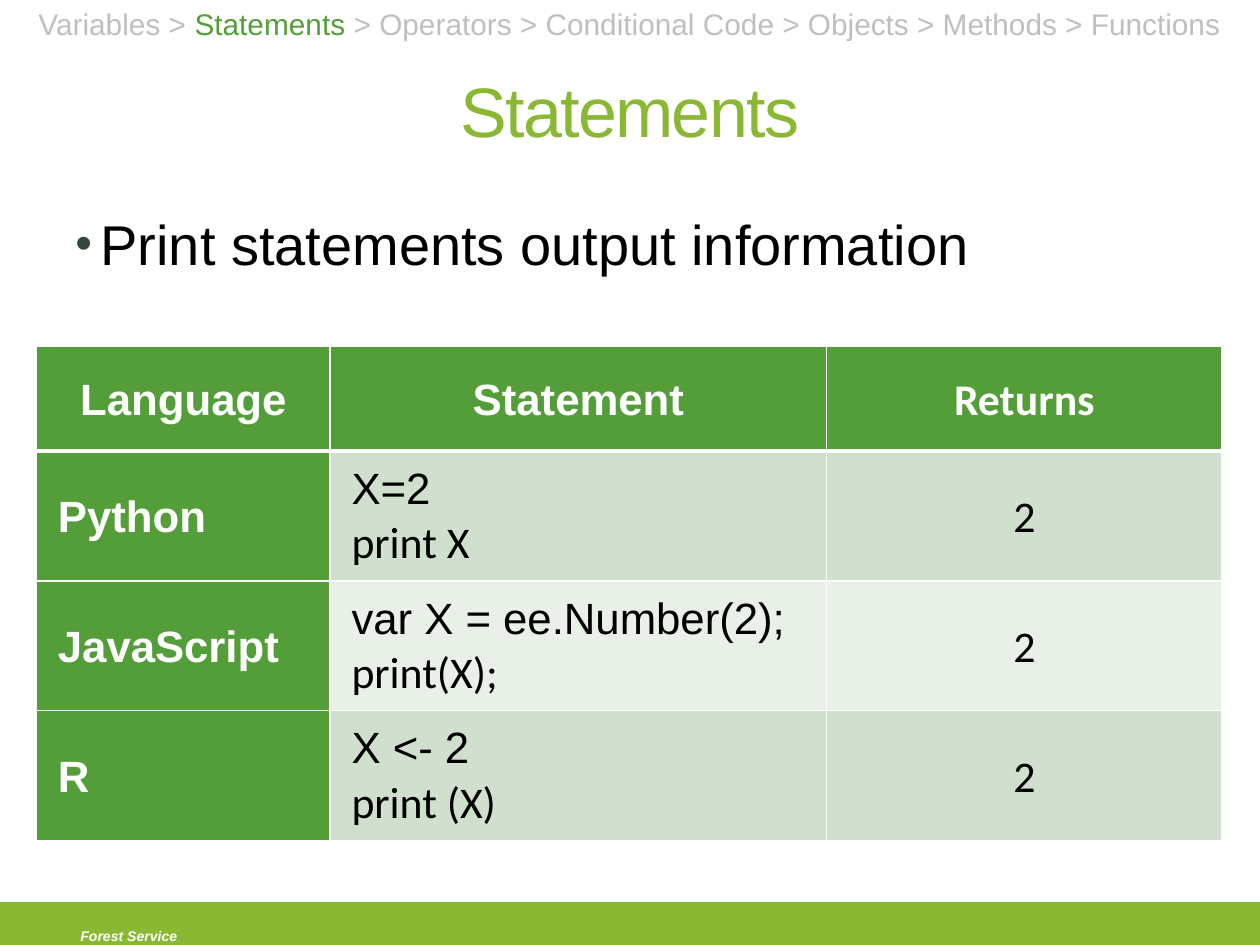
from lxml import etree
from pptx import Presentation
from pptx.dml.color import RGBColor
from pptx.enum.shapes import MSO_SHAPE
from pptx.enum.text import MSO_ANCHOR, PP_ALIGN
from pptx.oxml.ns import qn
from pptx.util import Inches, Pt

RECTANGLE = MSO_SHAPE.RECTANGLE
TOP, MIDDLE = MSO_ANCHOR.TOP, MSO_ANCHOR.MIDDLE
LEFT, CENTER = PP_ALIGN.LEFT, PP_ALIGN.CENTER

WHITE = RGBColor(0xFF, 0xFF, 0xFF)
BLACK = RGBColor(0x00, 0x00, 0x00)
GRAY = RGBColor(0xBF, 0xBF, 0xBF)
LIME = RGBColor(0x8A, 0xB8, 0x33)
GREEN = RGBColor(0x54, 0x9E, 0x39)
BULLET_COLOR = RGBColor(0x34, 0x47, 0x3D)
BANDS = [RGBColor(0xD1, 0xDF, 0xCE), RGBColor(0xE9, 0xF0, 0xE8)]

TOPICS = ["Variables", "Statements", "Operators", "Conditional Code",
          "Objects", "Methods", "Functions"]
CURRENT_TOPIC = "Statements"
COLUMN_WIDTHS = [2.33, 3.94, 3.14]
ROW_HEIGHTS = [0.83, 1.03, 1.03, 1.03]
HEADERS = ["Language", "Statement", "Returns"]
EXAMPLES = [
    ("Python", ["X=2", "print X"], "2"),
    ("JavaScript", ["var X = ee.Number(2);", "print(X);"], "2"),
    ("R", ["X <- 2", "print (X)"], "2"),
]


def set_font(font, size, color, name="Arial", bold=False):
    """Apply size, colour, typeface and weight to a font."""
    font.size = Pt(size)
    font.color.rgb = color
    font.name = name
    font.bold = bold


def add_text(slide, left, top, width, height, text, size, color,
             align=LEFT, anchor=TOP):
    """Add a one-paragraph text box and return its paragraph."""
    box = slide.shapes.add_textbox(Inches(left), Inches(top), Inches(width), Inches(height))
    frame = box.text_frame
    frame.word_wrap = True
    frame.vertical_anchor = anchor
    paragraph = frame.paragraphs[0]
    paragraph.text = text
    paragraph.alignment = align
    set_font(paragraph.font, size, color)
    return paragraph


def add_footer(slide):
    """Add the coloured footer bar and its label."""
    bar = slide.shapes.add_shape(RECTANGLE, 0, Inches(7.17), Inches(10), Inches(0.33))
    bar.shadow.inherit = False
    bar.fill.solid()
    bar.fill.fore_color.rgb = LIME
    bar.line.color.rgb = LIME
    bar.line.width = Pt(2)
    label = add_text(slide, 0.54, 7.31, 2.04, 0.24, "Forest Service", 8, WHITE)
    label.font.bold = True
    label.font.italic = True


def add_title(slide, text):
    """Add the centred title with slightly tightened letters."""
    paragraph = add_text(slide, 0.5, 0.33, 9, 1.08, text, 40, LIME, CENTER, MIDDLE)
    paragraph.runs[0].font._element.set("spc", "-100")


def add_bullet(slide, text):
    """Add the bulleted statement with a hanging indent."""
    paragraph = add_text(slide, 0.5, 1.61, 9, 0.65, "", 32, BLACK)
    properties = paragraph._p.get_or_add_pPr()
    indent = Inches(0.2)
    properties.set("marL", str(indent))
    properties.set("indent", str(-indent))
    color = etree.Element(qn("a:buClr"))
    etree.SubElement(color, qn("a:srgbClr"), val=str(BULLET_COLOR))
    size = etree.Element(qn("a:buSzPct"), val="85000")
    font = etree.Element(qn("a:buFont"), typeface="Arial")
    character = etree.Element(qn("a:buChar"), char="•")
    for position, element in enumerate([color, size, font, character]):
        properties.insert(position, element)
    paragraph.add_run().text = text


def add_borders(cell, top, bottom):
    """Give a cell white borders, with top and bottom widths in points."""
    properties = cell._tc.get_or_add_tcPr()
    for side, width in (("L", 1), ("R", 1), ("T", top), ("B", bottom)):
        line = etree.SubElement(properties, qn(f"a:ln{side}"), w=str(Pt(width)))
        fill = etree.SubElement(line, qn("a:solidFill"))
        etree.SubElement(fill, qn("a:srgbClr"), val=str(WHITE))


def fill_cell(cell, lines, fonts, color, fill, align=LEFT, bold=False, top=1, bottom=1):
    """Write lines into a cell, one typeface per line, and style it."""
    add_borders(cell, top, bottom)
    cell.fill.solid()
    cell.fill.fore_color.rgb = fill
    cell.vertical_anchor = MIDDLE
    cell.margin_left = cell.margin_right = Inches(0.17)
    cell.margin_top = cell.margin_bottom = 0
    cell.text = "\n".join(lines)
    for paragraph, name in zip(cell.text_frame.paragraphs, fonts):
        paragraph.alignment = align
        paragraph.line_spacing = 1.07
        set_font(paragraph.font, 25, color, name, bold)


def add_example_table(slide):
    """Add the table of print statements by language."""
    table = slide.shapes.add_table(
        len(ROW_HEIGHTS), len(COLUMN_WIDTHS), Inches(0.29), Inches(2.75),
        Inches(sum(COLUMN_WIDTHS)), Inches(sum(ROW_HEIGHTS))).table
    for column, width in zip(table.columns, COLUMN_WIDTHS):
        column.width = Inches(width)
    for row, height in zip(table.rows, ROW_HEIGHTS):
        row.height = Inches(height)
    for index, (header, name) in enumerate(zip(HEADERS, ["Arial", "Arial", "Calibri"])):
        fill_cell(table.cell(0, index), [header], [name], WHITE, GREEN, CENTER, True, bottom=3)
    for index, (language, code, result) in enumerate(EXAMPLES, start=1):
        band = BANDS[(index - 1) % 2]
        top = 3 if index == 1 else 1
        fill_cell(table.cell(index, 0), [language], ["Arial"], WHITE, GREEN, bold=True, top=top)
        fill_cell(table.cell(index, 1), code, ["Arial", "Calibri"], BLACK, band, top=top)
        fill_cell(table.cell(index, 2), [result], ["Calibri"], BLACK, band, CENTER, top=top)


def add_breadcrumb(slide):
    """Add the topic trail with the current topic highlighted."""
    paragraph = add_text(slide, 0, 0, 10, 0.39, "", 17, GRAY, CENTER)
    before, after = " > ".join(TOPICS).split(CURRENT_TOPIC)
    for text, color in ((before, GRAY), (CURRENT_TOPIC, GREEN), (after, GRAY)):
        run = paragraph.add_run()
        run.text = text
        run.font.color.rgb = color


def main():
    """Build the slide and save the presentation."""
    presentation = Presentation()
    presentation.slide_width = Inches(10)
    presentation.slide_height = Inches(7.5)
    slide = presentation.slides.add_slide(presentation.slide_layouts[6])
    add_footer(slide)
    add_title(slide, "Statements")
    add_bullet(slide, "Print statements output information")
    add_example_table(slide)
    add_breadcrumb(slide)
    presentation.save("out.pptx")


if __name__ == "__main__":
    main()
